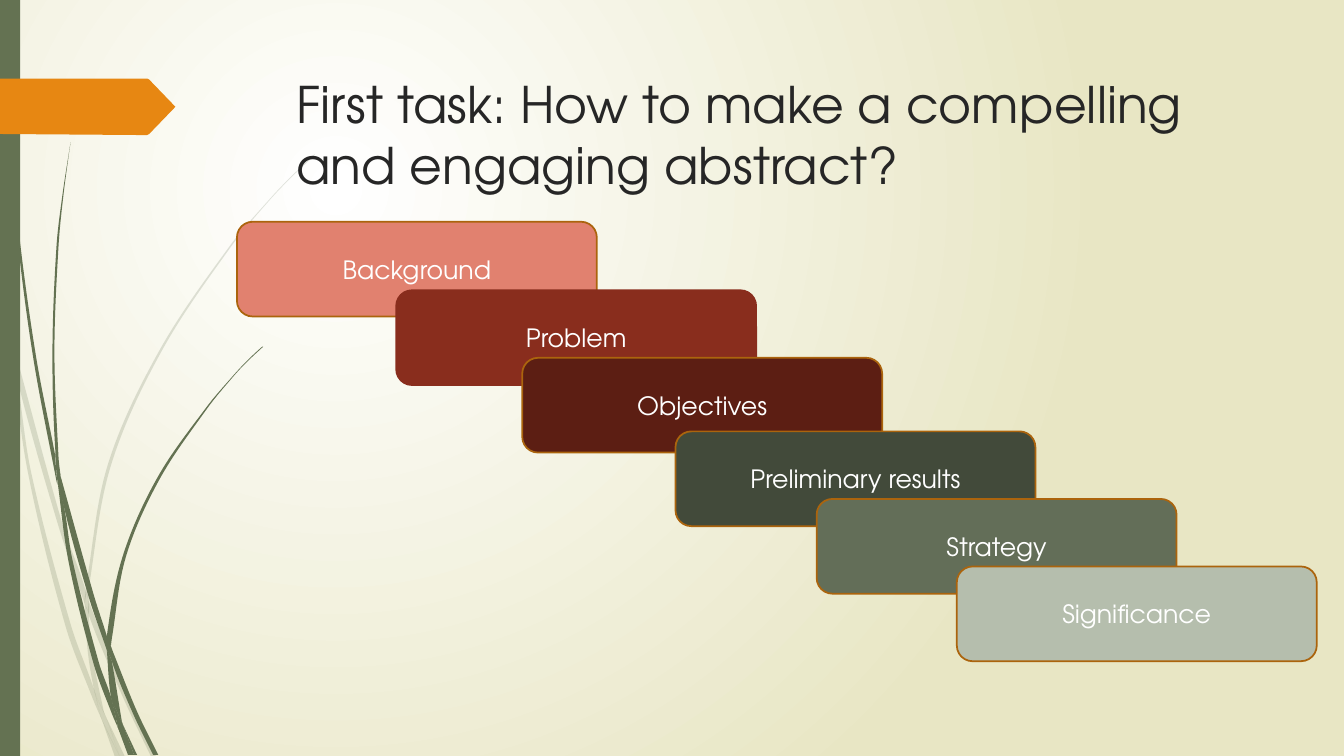
from math import cos, hypot, radians

from lxml import etree
from pptx import Presentation
from pptx.dml.color import RGBColor
from pptx.enum.shapes import MSO_SHAPE
from pptx.enum.text import MSO_ANCHOR, PP_ALIGN
from pptx.oxml.ns import qn
from pptx.util import Inches, Pt

RECTANGLE = MSO_SHAPE.RECTANGLE
ROUNDED = MSO_SHAPE.ROUNDED_RECTANGLE
TOP, MIDDLE = MSO_ANCHOR.TOP, MSO_ANCHOR.MIDDLE
LEFT, CENTER = PP_ALIGN.LEFT, PP_ALIGN.CENTER

WHITE = RGBColor(0xFF, 0xFF, 0xFF)
SAND = RGBColor(0xE8, 0xE6, 0xC4)
GREEN = RGBColor(0x64, 0x72, 0x52)
ORANGE = RGBColor(0xE7, 0x87, 0x12)
BROWN = RGBColor(0xAB, 0x64, 0x0D)
INK = RGBColor(0x26, 0x26, 0x26)
SALMON = RGBColor(0xE1, 0x81, 0x6F)
BRICK = RGBColor(0x89, 0x2D, 0x1D)
MAROON = RGBColor(0x5C, 0x1E, 0x13)
DARK_OLIVE = RGBColor(0x42, 0x4A, 0x3A)
OLIVE = RGBColor(0x63, 0x6E, 0x58)
SAGE = RGBColor(0xB5, 0xBE, 0xAD)

FONT = "TeX Gyre Adventor"
SLIDE_WIDTH, SLIDE_HEIGHT = 13.33, 7.5
SMOOTH_LIMIT = cos(radians(50))

PALE_BLADES = [
    [(0.11, 3.5), (0.09, 3.22), (0, 2.82), (0, 2.99), (0.1, 3.44)],
    [(0.58, 5.22), (0.84, 5.99), (0.85, 5.86), (0.62, 5.2), (0.14, 3.45),
     (0.17, 3.76)],
    [(0.92, 6.07), (0.88, 5.96), (0.88, 6.1), (1.23, 6.94), (1.5, 7.51),
     (1.55, 7.51), (1.27, 6.92)],
    [(1.19, 7.51), (1.24, 7.51), (1.05, 7.11)],
    [(0.93, 6.83), (0.7, 6.19), (0.31, 4.69), (0.17, 3.76), (0.11, 3.5),
     (0.28, 4.7), (0.65, 6.21), (0.92, 6.93), (1.01, 7.14), (0.99, 7.07)],
    [(0.84, 5.99), (0.87, 6.46), (0.93, 6.83), (0.96, 6.92), (1.05, 7.11),
     (1.03, 7.06), (0.91, 6.46), (0.88, 6.1), (0.88, 6.08)],
    [(0.88, 5.84), (1.1, 4.62), (1.6, 3.49), (2.29, 2.45), (2.68, 1.98),
     (2.9, 1.75), (3.12, 1.54), (3.12, 1.53), (2.89, 1.75), (2.68, 1.97),
     (2.28, 2.44), (1.58, 3.48), (1.07, 4.61), (0.85, 5.84), (0.85, 5.86),
     (0.88, 5.96)],
    [(1.01, 7.14), (1.14, 7.51), (1.19, 7.51)],
    [(0.88, 6.08), (0.88, 6.1), (0.88, 5.96), (0.85, 5.86), (0.84, 5.99)],
    [(0.96, 6.92), (0.93, 6.83), (0.99, 7.07), (1.01, 7.14), (1.19, 7.51),
     (1.05, 7.11)],
]
DARK_BLADES = [
    [(0.07, 1.1), (0.17, 2.33), (0.33, 3.55), (0.56, 4.77), (0.57, 4.81),
     (0.55, 4.57), (0.55, 4.53), (0.36, 3.55), (0.19, 2.32), (0.08, 1.09),
     (0.05, 0.48), (0.04, 0), (0.03, 0), (0.04, 0.48)],
    [(0.88, 5.92), (1.06, 6.45), (1.06, 6.33), (1.06, 6.31), (0.93, 5.9),
     (0.6, 4.72), (0.64, 5.05)],
    [(1.13, 6.49), (1.1, 6.41), (1.11, 6.56), (1.32, 7.08), (1.52, 7.49),
     (1.57, 7.49), (1.36, 7.06)],
    [(1.1, 6.91), (0.98, 6.57), (0.72, 5.56), (0.64, 5.05), (0.57, 4.77),
     (0.68, 5.57), (0.93, 6.59), (1.11, 7.08), (1.17, 7.22), (1.16, 7.17)],
    [(0.6, 4.72), (0.58, 4.53), (0.54, 3.49), (0.58, 2.45), (0.63, 1.93),
     (0.7, 1.41), (0.62, 1.93), (0.56, 2.45), (0.52, 3.49), (0.55, 4.49)],
    [(1.33, 7.49), (1.36, 7.49), (1.22, 7.19)],
    [(0.57, 4.77), (0.64, 5.05), (0.6, 4.72), (0.55, 4.49), (0.55, 4.53)],
    [(1.11, 6.33), (1.25, 5.52), (1.58, 4.76), (2.05, 4.06), (2.31, 3.74),
     (2.45, 3.59), (2.61, 3.44), (2.6, 3.44), (2.45, 3.58), (2.31, 3.73),
     (2.04, 4.05), (1.56, 4.74), (1.22, 5.51), (1.06, 6.31), (1.1, 6.41)],
    [(1.17, 7.22), (1.27, 7.49), (1.31, 7.49)],
    [(1.06, 6.45), (1.1, 6.91), (1.16, 7.06), (1.22, 7.19), (1.21, 7.16),
     (1.11, 6.56), (1.09, 6.51)],
    [(1.06, 6.45), (1.09, 6.51), (1.11, 6.56), (1.1, 6.41), (1.06, 6.31),
     (1.06, 6.33)],
    [(1.16, 7.06), (1.1, 6.91), (1.16, 7.17), (1.17, 7.22), (1.3, 7.49),
     (1.33, 7.49), (1.22, 7.19)],
]
MARKER = [(1.74, 1.06), (1.48, 1.33), (1.46, 1.34), (1.36, 1.34), (0, 1.33),
          (0, 0.78), (1.36, 0.78), (1.46, 0.78), (1.48, 0.79)]

STEP_WIDTH, STEP_HEIGHT = 3.57, 0.94
STEPS = [
    ("Background", 0, 0, SALMON, BROWN),
    ("Problem", 1.58, 0.68, BRICK, BRICK),
    ("Objectives", 2.83, 1.35, MAROON, BROWN),
    ("Preliminary results", 4.35, 2.08, DARK_OLIVE, BROWN),
    ("Strategy", 5.75, 2.75, OLIVE, BROWN),
    ("Significance", 7.14, 3.42, SAGE, BROWN),
]


def paint_background(slide):
    fill = slide.background.fill
    fill.gradient()
    for stop, color, position in zip(fill.gradient_stops, (WHITE, SAND), (0, 1)):
        stop.color.rgb = color
        stop.position = position
    gradient = slide.element.find(".//" + qn("a:gradFill"))
    radial = etree.Element(qn("a:path"), path="circle")
    etree.SubElement(radial, qn("a:fillToRect"),
                     l="50000", t="50000", r="100000", b="100000")
    gradient.replace(gradient.find(qn("a:lin")), radial)


def style_shape(shape, color, line_color=None):
    shape.shadow.inherit = False
    shape.fill.solid()
    shape.fill.fore_color.rgb = color
    if line_color is None:
        shape.line.fill.background()
    else:
        shape.line.color.rgb = line_color
        shape.line.width = Pt(1.25)


def write_text(shape, text, size, color, alignment, anchor):
    frame = shape.text_frame
    frame.word_wrap = True
    frame.vertical_anchor = anchor
    frame.text = text
    paragraph = frame.paragraphs[0]
    paragraph.alignment = alignment
    font = paragraph.runs[0].font
    font.name, font.size, font.color.rgb = FONT, Pt(size), color


def add_outline(shapes, points, left, top, color):
    corners = [(Inches(left + x), Inches(top + y)) for x, y in points]
    builder = shapes.build_freeform(*corners[0])
    builder.add_line_segments(corners[1:] + corners[:1], close=True)
    outline = builder.convert_to_shape()
    style_shape(outline, color)
    return outline


def unit(start, end):
    dx, dy = end[0] - start[0], end[1] - start[1]
    length = hypot(dx, dy)
    return dx / length, dy / length


def curve_outline(outline):
    lines = list(outline.element.iter(qn("a:lnTo")))
    corners = [(int(line[0].get("x")), int(line[0].get("y"))) for line in lines]
    count = len(corners)
    arriving, leaving = [], []
    for index, corner in enumerate(corners):
        before, after = corners[index - 1], corners[(index + 1) % count]
        inward, outward = unit(before, corner), unit(corner, after)
        if inward[0] * outward[0] + inward[1] * outward[1] > SMOOTH_LIMIT:
            inward = outward = unit(before, after)
        arriving.append(inward)
        leaving.append(outward)
    for index, line in enumerate(lines):
        start, end = corners[index - 1], corners[index]
        reach = hypot(end[0] - start[0], end[1] - start[1]) / 3
        handles = [
            [p + reach * d for p, d in zip(start, leaving[index - 1])],
            [p - reach * d for p, d in zip(end, arriving[index])],
            end]
        curve = etree.Element(qn("a:cubicBezTo"))
        for x, y in handles:
            etree.SubElement(curve, qn("a:pt"), x=str(round(x)), y=str(round(y)))
        line.getparent().replace(line, curve)


def add_grass(slide, blades, left, top, opacity=100):
    group = slide.shapes.add_group_shape()
    for points in blades:
        blade = add_outline(group.shapes, points, left, top, GREEN)
        curve_outline(blade)
        if opacity < 100:
            color = blade.element.spPr.find(qn("a:solidFill"))[0]
            etree.SubElement(color, qn("a:alpha"), val=str(opacity * 1000))


def add_side_decoration(slide, left, top, height):
    add_grass(slide, PALE_BLADES, left, top, opacity=20)
    add_grass(slide, DARK_BLADES, left, top)
    bar = slide.shapes.add_shape(
        RECTANGLE, Inches(left), Inches(top), Inches(0.2), Inches(height))
    style_shape(bar, GREEN)
    add_outline(slide.shapes, MARKER, left, top, ORANGE)


def add_title(slide, left, top, width, height):
    title = slide.shapes.add_textbox(
        Inches(left), Inches(top), Inches(width), Inches(height))
    write_text(title, "First task: How to make a compelling and engaging abstract?",
               36, INK, LEFT, TOP)


def add_staircase(slide, left, top):
    for label, across, down, color, line_color in STEPS:
        step = slide.shapes.add_shape(
            ROUNDED, Inches(left + across), Inches(top + down),
            Inches(STEP_WIDTH), Inches(STEP_HEIGHT))
        style_shape(step, color, line_color)
        write_text(step, label, 18, WHITE, CENTER, MIDDLE)


def main():
    presentation = Presentation()
    presentation.slide_width = Inches(SLIDE_WIDTH)
    presentation.slide_height = Inches(SLIDE_HEIGHT)
    slide = presentation.slides.add_slide(presentation.slide_layouts[6])
    paint_background(slide)
    add_side_decoration(slide, 0, 0, SLIDE_HEIGHT)
    add_title(slide, 2.84, 0.68, 9.75, 1.4)
    add_staircase(slide, 2.35, 2.2)
    presentation.save("out.pptx")


if __name__ == "__main__":
    main()
